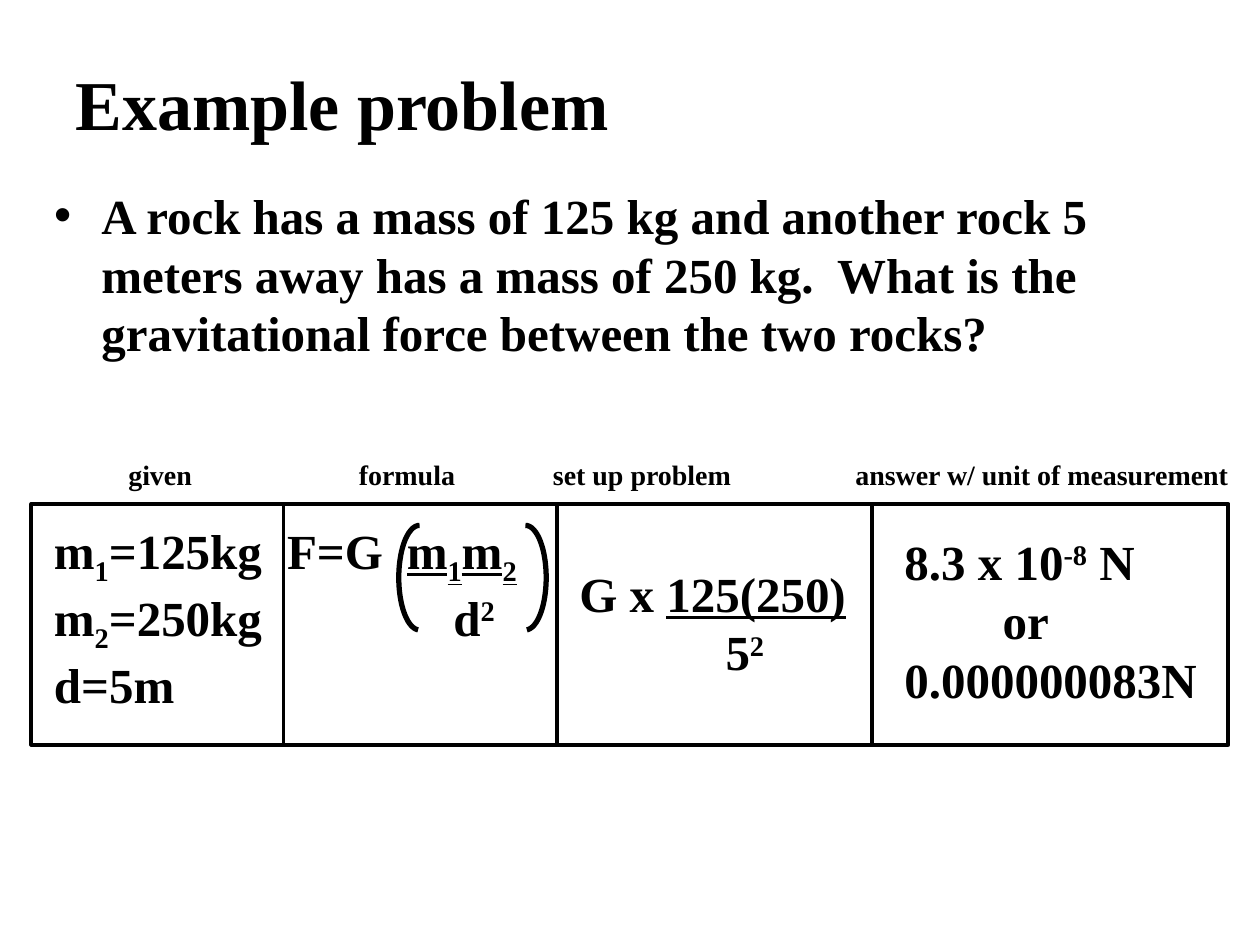
from dataclasses import dataclass
from math import cos, radians, sin

from lxml.etree import SubElement
from pptx import Presentation
from pptx.dml.color import RGBColor
from pptx.enum.shapes import MSO_CONNECTOR, MSO_SHAPE
from pptx.enum.text import MSO_ANCHOR, MSO_AUTO_SIZE, PP_ALIGN
from pptx.oxml.ns import qn
from pptx.util import Inches, Pt

FONT = "Times New Roman"
BLACK = "000000"
SUBSCRIPT, SUPERSCRIPT = -25, 30


@dataclass
class Piece:
    text: str
    baseline: int = 0
    underline: bool = False


@dataclass
class Line:
    pieces: list[Piece]
    tabs: tuple[float, ...] = ()


@dataclass
class TextBlock:
    left: float
    top: float
    width: float
    height: float
    lines: list[Line]
    size: int = 28


def color(value: str) -> RGBColor:
    return RGBColor.from_string(value)


def add_run(paragraph, piece: Piece, size: int) -> None:
    run = paragraph.add_run()
    run.text = piece.text
    run.font.name = FONT
    run.font.size = Pt(size)
    run.font.bold = True
    run.font.color.rgb = color(BLACK)
    if piece.underline:
        run.font.underline = True
    if piece.baseline:
        run._r.get_or_add_rPr().set("baseline", str(piece.baseline * 1000))


def add_tabs(paragraph, positions: tuple[float, ...]) -> None:
    tab_list = SubElement(paragraph._p.get_or_add_pPr(), qn("a:tabLst"))
    for position in positions:
        SubElement(tab_list, qn("a:tab"), pos=str(Inches(position)), algn="l")


def add_text_block(slide, block: TextBlock) -> None:
    box = slide.shapes.add_textbox(
        Inches(block.left), Inches(block.top), Inches(block.width), Inches(block.height))
    frame = box.text_frame
    frame.word_wrap = True
    frame.auto_size = MSO_AUTO_SIZE.SHAPE_TO_FIT_TEXT
    for index, line in enumerate(block.lines):
        paragraph = frame.add_paragraph() if index else frame.paragraphs[0]
        if line.tabs:
            add_tabs(paragraph, line.tabs)
        for piece in line.pieces:
            add_run(paragraph, piece, block.size)


def fill_placeholder(shape, left: float, top: float, width: float, height: float,
                     text: str, size: int) -> None:
    shape.left, shape.top = Inches(left), Inches(top)
    shape.width, shape.height = Inches(width), Inches(height)
    paragraph = shape.text_frame.paragraphs[0]
    paragraph.alignment = PP_ALIGN.LEFT
    add_run(paragraph, Piece(text), size)


def style_outline(shape, width: float) -> None:
    shape.line.color.rgb = color(BLACK)
    shape.line.width = Pt(width)


def add_divider(slide, x: float, top: float, bottom: float) -> None:
    divider = slide.shapes.add_connector(
        MSO_CONNECTOR.STRAIGHT, Inches(x), Inches(top), Inches(x), Inches(bottom))
    style_outline(divider, 2.25)
    SubElement(divider._element.spPr, qn("a:effectLst"))


def add_parenthesis(slide, x: float, side: int) -> None:
    """Half an ellipse bulging left (side -1) or right (side 1) from x."""
    points = [(Inches(x + side * 0.165 * cos(radians(angle))),
               Inches(4.585 + 0.415 * sin(radians(angle))))
              for angle in range(-90, 87, 4)]
    builder = slide.shapes.build_freeform(*points[0])
    builder.add_line_segments(points[1:], close=False)
    shape = builder.convert_to_shape()
    shape.fill.background()
    shape.shadow.inherit = False
    style_outline(shape, 3)


def main() -> None:
    presentation = Presentation()
    presentation.slide_width, presentation.slide_height = Inches(10), Inches(7.5)
    slide = presentation.slides.add_slide(presentation.slide_layouts[1])

    # Title and question
    title, body = slide.shapes.title, slide.placeholders[1]
    fill_placeholder(title, 0.5, 0.42, 9, 0.78, "Example problem", 40)
    title.text_frame.vertical_anchor = MSO_ANCHOR.MIDDLE
    fill_placeholder(
        body, 0.33, 1.42, 9.17, 2.08,
        "A rock has a mass of 125 kg and another rock 5 meters away has a mass of 250 kg.  "
        "What is the gravitational force between the two rocks?", 28)

    # Frame of the worked solution
    top, height = 4, 1.91
    frame = slide.shapes.add_shape(
        MSO_SHAPE.RECTANGLE, Inches(0.25), Inches(top), Inches(9.5), Inches(height))
    frame.fill.background()
    frame.shadow.inherit = False
    style_outline(frame, 2.25)

    # Given values and formula
    add_text_block(slide, TextBlock(0.33, 4.08, 4.08, 1.57, [
        Line([Piece("m"), Piece("1", SUBSCRIPT), Piece("=125kg\tF=G\t"),
              Piece("m", underline=True), Piece("1", SUBSCRIPT, True),
              Piece("m", underline=True), Piece("2", SUBSCRIPT, True)], (1.85, 2.8)),
        Line([Piece("m"), Piece("2", SUBSCRIPT), Piece("=250kg\td"),
              Piece("2", SUPERSCRIPT)], (3.17,)),
        Line([Piece("d=5m")]),
    ]))

    # Column dividers
    for x in (2.25, 4.42, 6.92):
        add_divider(slide, x, top, top + height)

    # Column labels
    add_text_block(slide, TextBlock(0.92, 3.58, 8.99, 0.37, [
        Line([Piece("given\tformula\tset up problem\tanswer w/ unit of measurement")],
             (1.83, 3.37, 5.77)),
    ], size=16))

    # Parentheses around the fraction
    for x, side in ((3.33, -1), (4.17, 1)):
        add_parenthesis(slide, x, side)

    # Set-up and answer
    add_text_block(slide, TextBlock(4.5, 4.42, 2.35, 1.03, [
        Line([Piece("G x "), Piece("125(250)", underline=True)]),
        Line([Piece("\t5"), Piece("2", SUPERSCRIPT)], (1.16,)),
    ]))
    add_text_block(slide, TextBlock(7.08, 4.17, 2.55, 1.5, [
        Line([Piece("8.3 x 10"), Piece("-8", SUPERSCRIPT), Piece(" N")]),
        Line([Piece("\tor")], (0.78,)),
        Line([Piece("0.000000083N")]),
    ]))

    presentation.save("out.pptx")


if __name__ == "__main__":
    main()
